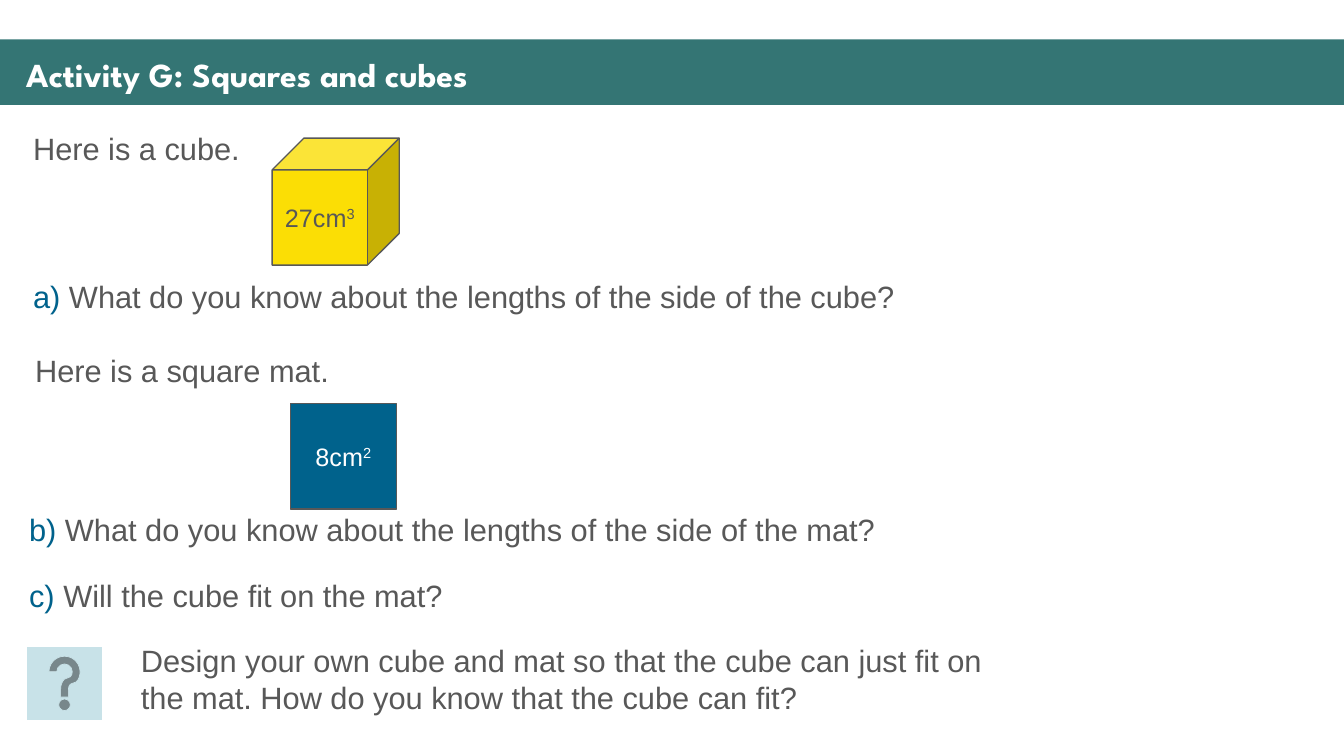
from dataclasses import dataclass

from lxml.etree import SubElement
from pptx import Presentation
from pptx.dml.color import RGBColor
from pptx.enum.shapes import MSO_SHAPE as Preset
from pptx.enum.text import MSO_ANCHOR as Anchor, MSO_AUTO_SIZE as AutoSize, PP_ALIGN as Align
from pptx.oxml.ns import qn
from pptx.shapes.autoshape import Shape
from pptx.slide import Slide
from pptx.util import Inches, Pt


@dataclass(frozen=True)
class Theme:
    banner: str = "347574"
    white: str = "FFFFFF"
    text: str = "585858"
    blue: str = "00628C"
    yellow: str = "FBDE05"
    pale: str = "C8E2E8"
    title_font: str = "League Spartan"
    body_font: str = "Arial"
    title_size: int = 24
    body_size: int = 22
    label_size: int = 18


THEME = Theme()


@dataclass(frozen=True)
class Area:
    left: float
    top: float
    width: float
    height: float

    def lengths(self) -> list[int]:
        return [Inches(n) for n in (self.left, self.top, self.width, self.height)]


@dataclass(frozen=True)
class Span:
    text: str
    color: str = THEME.text
    size: int = THEME.body_size
    font: str = THEME.body_font
    bold: bool = False
    raised: bool = False


@dataclass(frozen=True)
class Figure:
    preset: Preset
    area: Area
    fill: str
    line: str | None = None
    line_width: float = 1
    label: tuple[Span, ...] = ()


@dataclass(frozen=True)
class TextBlock:
    area: Area
    spans: tuple[Span, ...]


def volume_label(amount: str, power: str, color: str) -> tuple[Span, ...]:
    """Return a measure followed by its raised power."""
    return (Span(amount, color, THEME.label_size),
            Span(power, color, THEME.label_size, raised=True))


def question(letter: str, text: str) -> tuple[Span, ...]:
    return Span(f"{letter}) ", THEME.blue), Span(text)


FIGURES = (
    Figure(Preset.RECTANGLE, Area(0, 0.39, 13.33, 0.65), THEME.banner),
    Figure(Preset.CUBE, Area(2.7, 1.37, 1.26, 1.26), THEME.yellow, THEME.text,
           label=volume_label("27cm", "3", THEME.text)),
    Figure(Preset.RECTANGLE, Area(2.88, 4, 1.05, 1.05), THEME.blue, THEME.text,
           label=volume_label("8cm", "2", THEME.white)),
    Figure(Preset.ACTION_BUTTON_HELP, Area(0.27, 6.42, 0.74, 0.72), THEME.pale,
           THEME.pale, 0.5),
)

TITLE = TextBlock(
    Area(0.16, 0.5, 13.04, 0.47),
    (Span("Activity G: Squares and cubes", THEME.white, THEME.title_size,
          THEME.title_font, bold=True),))

TEXT_BLOCKS = (
    TextBlock(Area(0.23, 1.24, 6.19, 0.47), (Span("Here is a cube."),)),
    TextBlock(Area(0.23, 2.71, 12.72, 0.47),
              question("a", "What do you know about the lengths of the side of the cube?")),
    TextBlock(Area(0.25, 3.44, 6.66, 0.47), (Span("Here is a square mat."),)),
    TextBlock(Area(0.19, 5.02, 12.72, 0.47),
              question("b", "What do you know about the lengths of the side of the mat?")),
    TextBlock(Area(0.19, 5.67, 12.72, 0.47), question("c", "Will the cube fit on the mat?")),
    TextBlock(Area(1.3, 6.32, 8.67, 0.84),
              (Span("Design your own cube and mat so that the cube can just fit on "
                    "the mat. How do you know that the cube can fit?"),)),
)


def write_spans(box: Shape, spans: tuple[Span, ...], align: Align = Align.LEFT,
                relative_space: bool = True) -> None:
    """Write one paragraph, by default with 20% space before it."""
    para = box.text_frame.paragraphs[0]
    para.alignment = align
    if relative_space:
        space = SubElement(para._p.get_or_add_pPr(), qn("a:spcBef"))
        SubElement(space, qn("a:spcPct"), val="20000")
    for span in spans:
        run = para.add_run()
        run.text = span.text
        run.font.name = span.font
        run.font.size = Pt(span.size)
        run.font.bold = span.bold
        run.font.color.rgb = RGBColor.from_string(span.color)
        if span.raised:
            run._r.get_or_add_rPr().set("baseline", "30000")


def draw_figure(page: Slide, figure: Figure) -> None:
    shape = page.shapes.add_shape(figure.preset, *figure.area.lengths())
    shape.shadow.inherit = False
    shape.fill.solid()
    shape.fill.fore_color.rgb = RGBColor.from_string(figure.fill)
    if figure.line:
        shape.line.color.rgb = RGBColor.from_string(figure.line)
        shape.line.width = Pt(figure.line_width)
    else:
        shape.line.fill.background()
    if figure.label:
        shape.text_frame.word_wrap = False
        shape.text_frame.vertical_anchor = Anchor.MIDDLE
        write_spans(shape, figure.label, Align.CENTER)


def add_text_box(page: Slide, area: Area) -> Shape:
    box = page.shapes.add_textbox(*area.lengths())
    box.text_frame.word_wrap = True
    return box


def draw_title(page: Slide) -> None:
    box = add_text_box(page, TITLE.area)
    box.text_frame.vertical_anchor = Anchor.MIDDLE
    write_spans(box, TITLE.spans, relative_space=False)


def draw_text(page: Slide, block: TextBlock) -> None:
    box = add_text_box(page, block.area)
    box.text_frame.auto_size = AutoSize.SHAPE_TO_FIT_TEXT
    write_spans(box, block.spans)


def main() -> None:
    deck = Presentation()
    deck.slide_width, deck.slide_height = Inches(13.33), Inches(7.5)
    page = deck.slides.add_slide(deck.slide_layouts[6])
    for figure in FIGURES:
        draw_figure(page, figure)
    draw_title(page)
    for block in TEXT_BLOCKS:
        draw_text(page, block)
    deck.save("out.pptx")


if __name__ == "__main__":
    main()
